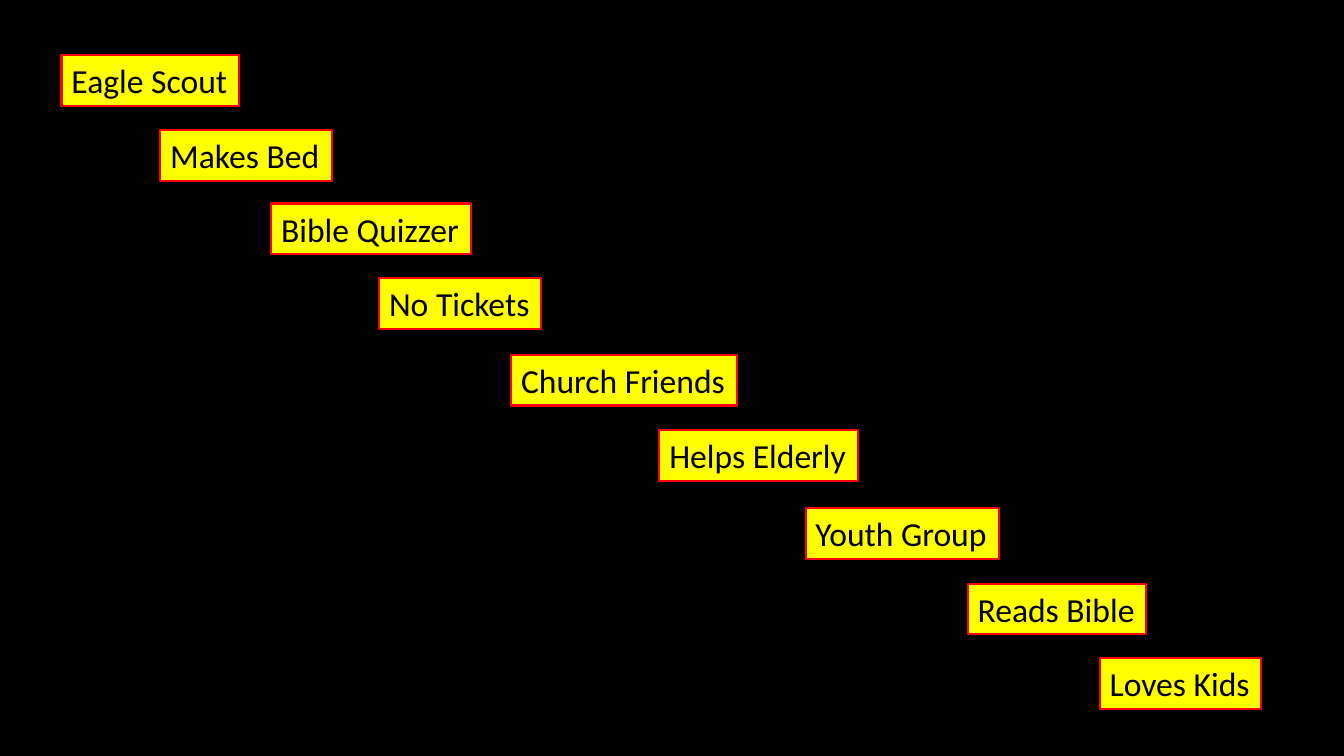
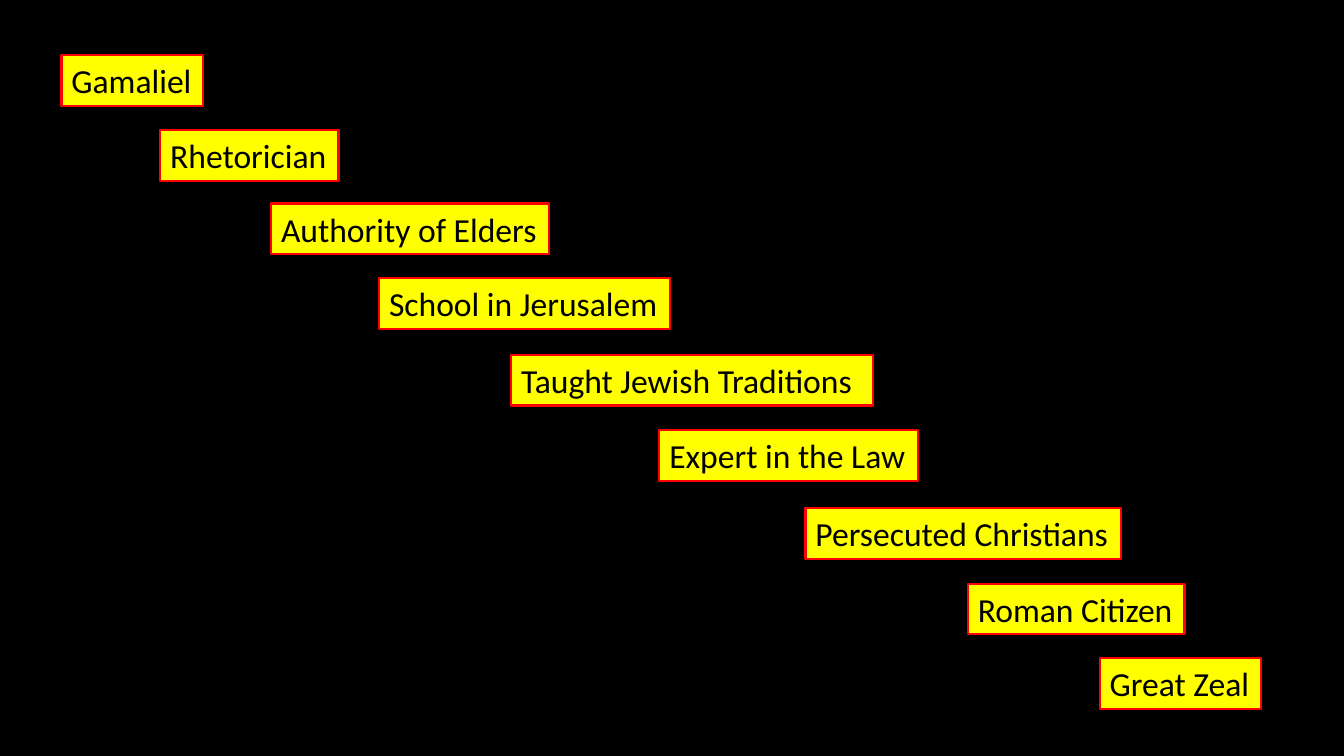
import pptx
import pptx.util
import pptx.dml.color
import pptx.enum.text

Pt = pptx.util.Pt

BLACK, YELLOW, RED = "000000", "FFFF00", "FF0000"
FONT = "Calibri"
LABEL_HEIGHT = 36.35

# Offsets of the nine stairs from the top left of the staircase
STAIRS = [(0, 0), (70.5, 53.3), (149.7, 105.8), (226.8, 159.1), (321.1, 213.8),
          (427, 267.8), (531.4, 323.3), (647.3, 377.3), (741.6, 430.6)]

# Label and width for each stair
MODERN = [("Eagle Scout", 126.7), ("Makes Bed", 122.4), ("Bible Quizzer", 142.6),
          ("No Tickets", 115.9), ("Church Friends", 161.3), ("Helps Elderly", 141.8),
          ("Youth Group", 138.2), ("Reads Bible", 127.4), ("Loves Kids", 115.2)]
PAUL = [("Gamaliel", 100.8), ("Rhetorician", 127.4), ("Authority of Elders", 198.7),
        ("School in Jerusalem", 208.1), ("Taught Jewish Traditions", 258.5),
        ("Expert in the Law", 185), ("Persecuted Christians", 225.4),
        ("Roman Citizen", 154.8), ("Great Zeal", 115.2)]


def color(hex_string):
    return pptx.dml.color.RGBColor.from_string(hex_string)


def add_label(s, text, left, top, width):
    sp = s.shapes.add_textbox(Pt(left), Pt(top), Pt(width), Pt(LABEL_HEIGHT))
    sp.fill.solid()
    sp.fill.fore_color.rgb = color(YELLOW)
    sp.line.color.rgb = color(RED)
    sp.line.width = Pt(1.5)
    tf = sp.text_frame
    tf.word_wrap = False
    tf.auto_size = pptx.enum.text.MSO_AUTO_SIZE.SHAPE_TO_FIT_TEXT
    p = tf.paragraphs[0]
    p.text = text
    p.font.name = FONT
    p.font.size = Pt(24)
    p.font.color.rgb = color(BLACK)


def add_staircase(s, labels, left, top):
    for (text, width), (dx, dy) in zip(labels, STAIRS):
        add_label(s, text, left + dx, top + dy, width)


def add_staircase_slide(prs, labels):
    s = prs.slides.add_slide(prs.slide_layouts[6])
    s.background.fill.solid()
    s.background.fill.fore_color.rgb = color(BLACK)
    add_staircase(s, labels, 44, 39.6)


def main():
    prs = pptx.Presentation()
    prs.slide_width, prs.slide_height = Pt(960), Pt(540)
    for labels in (MODERN, PAUL):
        add_staircase_slide(prs, labels)
    prs.save("out.pptx")


if __name__ == "__main__":
    main()
